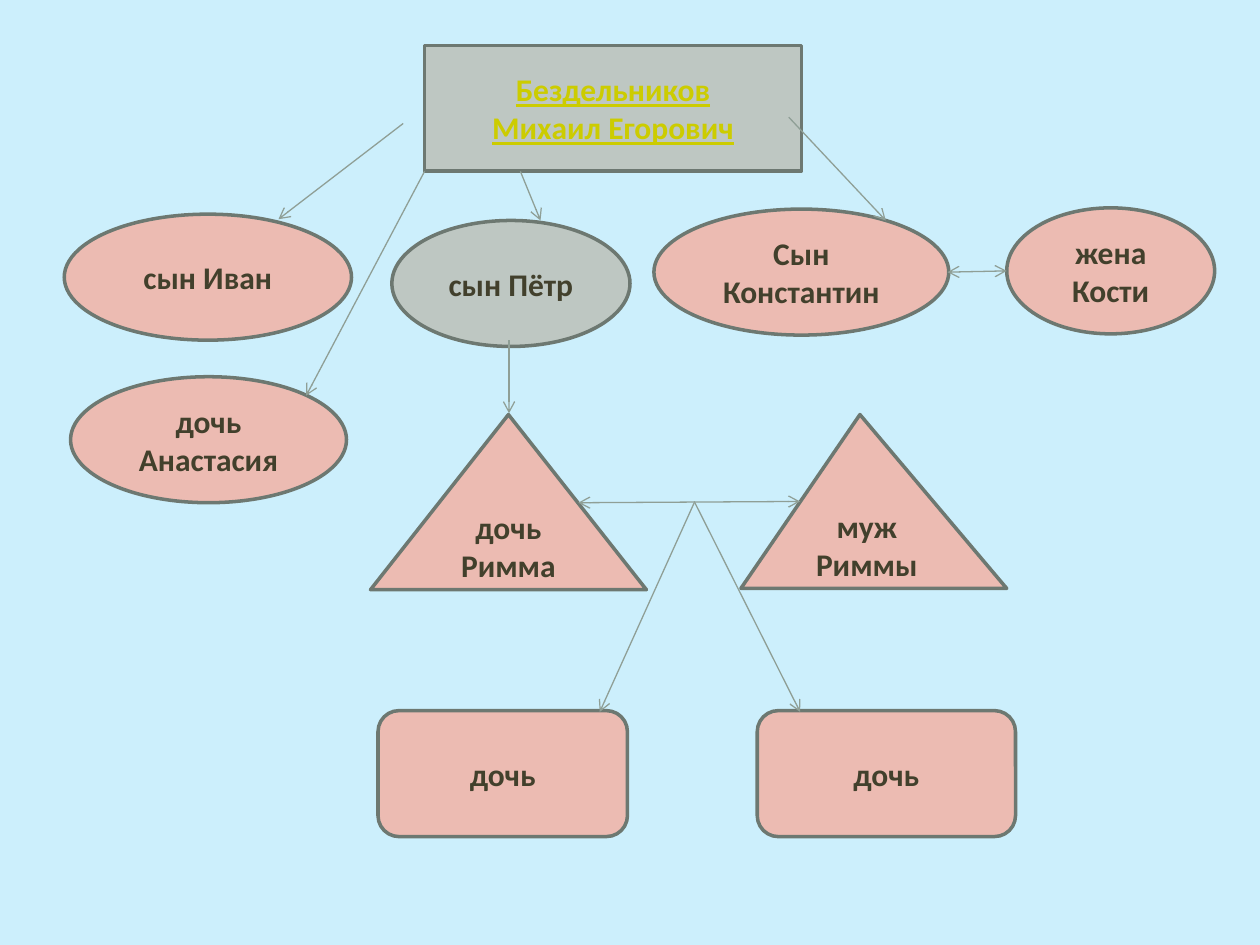
from pptx import Presentation
from pptx.dml.color import RGBColor
from pptx.enum.shapes import MSO_CONNECTOR, MSO_SHAPE
from pptx.enum.text import MSO_ANCHOR, PP_ALIGN
from pptx.oxml.ns import qn
from pptx.util import Inches, Pt
from lxml.etree import SubElement

THEME = {
    "back": RGBColor.from_string("CCEFFC"),
    "grey": RGBColor.from_string("BEC7C2"),
    "pink": RGBColor.from_string("ECBBB2"),
    "outline": RGBColor.from_string("6D7871"),
    "arrow": RGBColor.from_string("8F9F96"),
    "text": RGBColor.from_string("42402C"),
    "root": RGBColor.from_string("CCCC00"),
    "font": "Calibri",
    "size": Pt(18),
    "outline_width": Pt(2),
    "arrow_width": Pt(0.75),
}

prs = Presentation()
prs.slide_width, prs.slide_height = Inches(10), Inches(7.5)
COL, ROW = prs.slide_width / 100, prs.slide_height / 75  # grid of 100 x 75
s = prs.slides.add_slide(prs.slide_layouts[6])
s.background.fill.solid()
s.background.fill.fore_color.rgb = THEME["back"]


def add_person(kind, x, y, w, h, fill, text, color="text"):
    sp = s.shapes.add_shape(kind, round(x * COL), round(y * ROW),
                            round(w * COL), round(h * ROW))
    sp.shadow.inherit = False
    sp.fill.solid()
    sp.fill.fore_color.rgb = THEME[fill]
    sp.line.color.rgb = THEME["outline"]
    sp.line.width = THEME["outline_width"]
    tf = sp.text_frame
    tf.word_wrap = True
    tf.vertical_anchor = MSO_ANCHOR.MIDDLE
    tf.text = text
    for p in tf.paragraphs:
        p.alignment = PP_ALIGN.CENTER
        p.font.name, p.font.size, p.font.bold = THEME["font"], THEME["size"], True
        p.font.color.rgb = THEME[color]
    return sp


def add_arrow(x1, y1, x2, y2, ends=("tailEnd",)):
    c = s.shapes.add_connector(MSO_CONNECTOR.STRAIGHT, round(x1 * COL), round(y1 * ROW),
                               round(x2 * COL), round(y2 * ROW))
    c.line.color.rgb = THEME["arrow"]
    c.line.width = THEME["arrow_width"]
    ln = c.line._get_or_add_ln()
    for end in ends:
        SubElement(ln, qn(f"a:{end}"), type="arrow")
    SubElement(c._element.spPr, qn("a:effectLst"))


# Head of the family
root = add_person(MSO_SHAPE.RECTANGLE, 33.7, 3.6, 29.9, 10, "grey",
                  "Бездельников\nМихаил Егорович", "root")
for p in root.text_frame.paragraphs:
    p.font.underline = True

# Children and a daughter-in-law
for x, y, w, fill, text in [
    (5.1, 17, 22.8, "pink", "сын Иван"),
    (5.6, 29.9, 21.9, "pink", "дочь Анастасия"),
    (31.1, 17.5, 18.9, "grey", "сын Пётр"),
    (51.9, 16.6, 23.4, "pink", "Сын Константин"),
    (79.9, 16.5, 16.5, "pink", "жена Кости"),
]:
    add_person(MSO_SHAPE.OVAL, x, y, w, 10, fill, text)

# Granddaughter and her husband
add_person(MSO_SHAPE.ISOSCELES_TRIANGLE, 29.4, 32.9, 21.9, 13.9, "pink", "дочь Римма")
husband = add_person(MSO_SHAPE.ISOSCELES_TRIANGLE, 58.8, 32.9, 21.1, 13.8, "pink", "муж Риммы")
husband.adjustments[0] = 0.448

# Great-granddaughters
for x, w in [(30, 19.8), (60.1, 20.5)]:
    add_person(MSO_SHAPE.ROUNDED_RECTANGLE, x, 56.4, w, 10, "pink", "дочь")

# Descent
for line in [
    (32, 9.8, 22.1, 17.4),
    (33.7, 13.6, 24.3, 31.4),
    (41.3, 13.6, 42.9, 17.5),
    (62.6, 9.3, 70.3, 17.5),
    (40.4, 27, 40.4, 32.8),
    (55.1, 39.9, 47.6, 56.5),
    (55.1, 39.8, 63.5, 56.5),
]:
    add_arrow(*line)

# Marriages
for line in [(75.2, 21.6, 79.9, 21.5), (45.9, 39.9, 63.5, 39.8)]:
    add_arrow(*line, ends=("headEnd", "tailEnd"))

prs.save("out.pptx")
